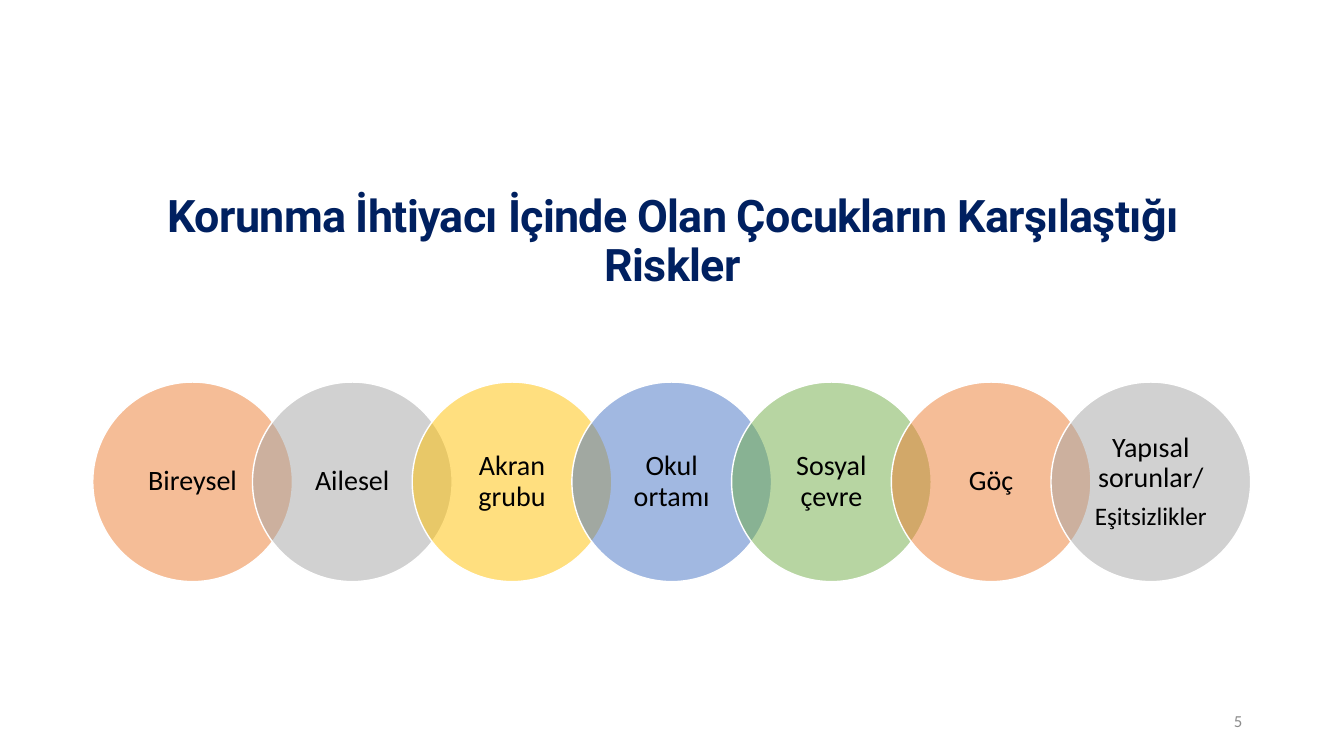
from pptx import Presentation
from pptx.dml.color import RGBColor
from pptx.enum.shapes import MSO_SHAPE
from pptx.enum.text import MSO_ANCHOR, PP_ALIGN
from pptx.oxml.ns import qn
from pptx.util import Inches, Pt
from lxml import etree

COLORS = {
    "navy": "002060",
    "black": "000000",
    "white": "FFFFFF",
    "number": "8C8C8C",
    "orange": "ED7D31",
    "gray": "A5A5A5",
    "gold": "FFC000",
    "blue": "4472C4",
    "green": "70AD47",
}
RISKS = [
    ("orange", [("Bireysel", 20)]),
    ("gray", [("Ailesel", 20)]),
    ("gold", [("Akran grubu", 20)]),
    ("blue", [("Okul ortamı", 20)]),
    ("green", [("Sosyal çevre", 20)]),
    ("orange", [("Göç", 20)]),
    ("gray", [("Yapısal sorunlar/", 20), ("Eşitsizlikler", 18)]),
]
CHAIN_LEFT, CHAIN_TOP = 0.92, 3.79
DIAMETER = 1.98
STEP = DIAMETER * 0.8


def color(name):
    return RGBColor.from_string(COLORS[name])


def write(paragraph, text, size, font="Calibri", fill="black", bold=False,
          align=PP_ALIGN.CENTER, line_spacing=0.9, space_after=0, tracking=None):
    paragraph.alignment = align
    paragraph.line_spacing = line_spacing
    paragraph.space_before = Pt(0)
    paragraph.space_after = Pt(space_after)
    run = paragraph.add_run()
    run.text = text
    run.font.name = font
    run.font.size = Pt(size)
    run.font.bold = bold
    run.font.color.rgb = color(fill)
    if tracking is not None:
        run._r.get_or_add_rPr().set("spc", str(int(tracking * 100)))


def set_transparency(shape, opacity):
    solid = shape.fill._xPr.find(qn("a:solidFill"))
    alpha = etree.SubElement(solid[0], qn("a:alpha"))
    alpha.set("val", str(opacity * 1000))


def add_title(slide, text):
    title = slide.shapes.title
    title.left, title.top = Inches(0.92), Inches(1.68)
    title.width, title.height = Inches(11.5), Inches(1.45)
    frame = title.text_frame
    frame.word_wrap = True
    frame.vertical_anchor = MSO_ANCHOR.MIDDLE
    write(frame.paragraphs[0], text, 32, font="Roboto", fill="navy",
          bold=True, tracking=-0.5)


def add_risk_circle(slide, left, fill, lines):
    circle = slide.shapes.add_shape(
        MSO_SHAPE.OVAL, Inches(left), Inches(CHAIN_TOP),
        Inches(DIAMETER), Inches(DIAMETER))
    circle.shadow.inherit = False
    circle.fill.solid()
    circle.fill.fore_color.rgb = color(fill)
    set_transparency(circle, 50)
    circle.line.color.rgb = color("white")
    circle.line.width = Pt(1)
    frame = circle.text_frame
    frame.word_wrap = True
    frame.vertical_anchor = MSO_ANCHOR.MIDDLE
    frame.margin_left = frame.margin_right = Inches(0.11)
    frame.margin_top = frame.margin_bottom = Inches(0.03)
    for index, (text, size) in enumerate(lines):
        paragraph = frame.add_paragraph() if index else frame.paragraphs[0]
        write(paragraph, text, size, space_after=7)


def add_slide_number(slide, text):
    box = slide.shapes.add_textbox(
        Inches(9.42), Inches(6.95), Inches(3), Inches(0.4))
    frame = box.text_frame
    frame.word_wrap = True
    frame.vertical_anchor = MSO_ANCHOR.MIDDLE
    write(frame.paragraphs[0], text, 12, fill="number",
          align=PP_ALIGN.RIGHT, line_spacing=1.0)


def main():
    presentation = Presentation()
    presentation.slide_width = Inches(13.33)
    presentation.slide_height = Inches(7.5)
    slide = presentation.slides.add_slide(presentation.slide_layouts[5])
    add_title(slide, "Korunma İhtiyacı İçinde Olan Çocukların Karşılaştığı Riskler")
    for index, (fill, lines) in enumerate(RISKS):
        add_risk_circle(slide, CHAIN_LEFT + index * STEP, fill, lines)
    add_slide_number(slide, "5")
    presentation.save("out.pptx")


if __name__ == "__main__":
    main()
